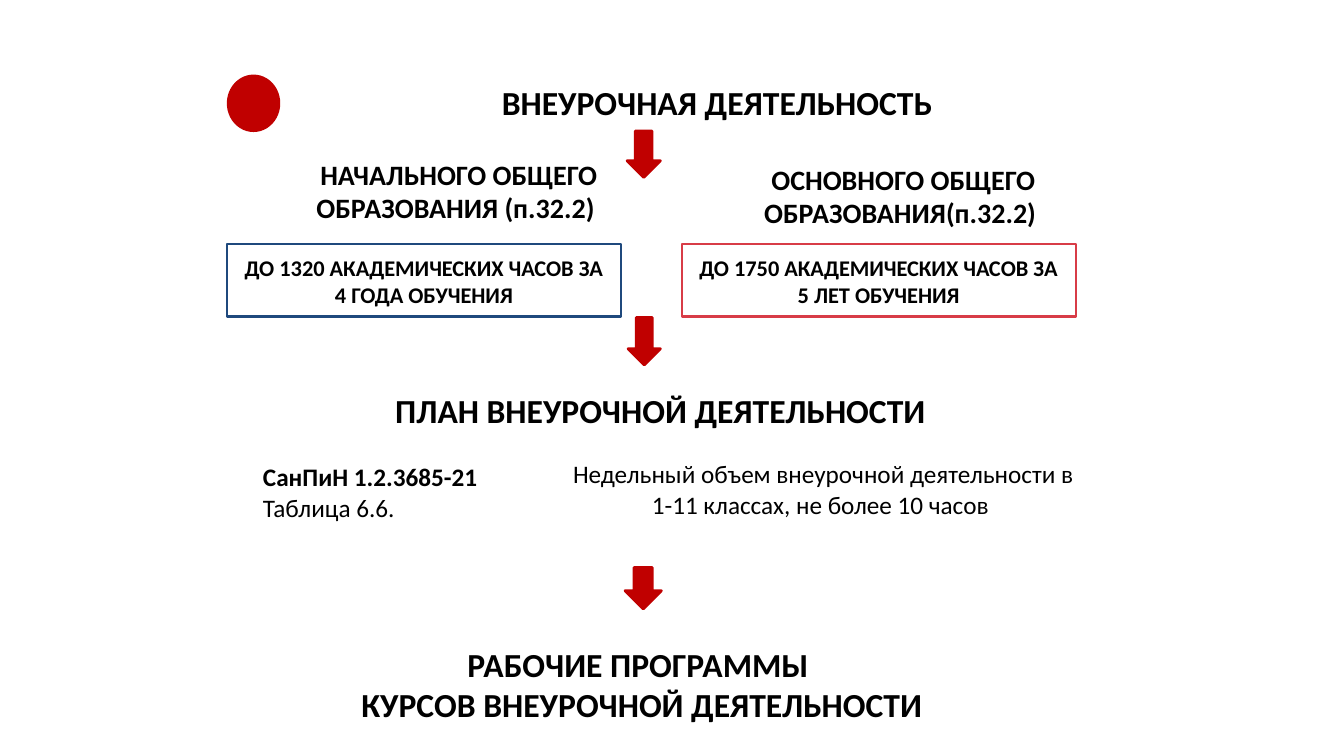
from dataclasses import dataclass

from pptx import Presentation
from pptx.dml.color import RGBColor
from pptx.enum import shapes, text
from pptx.util import Inches, Pt


@dataclass(frozen=True)
class Theme:
    """Colours, font and type sizes of the slide."""
    font: str = "Calibri"
    ink: str = "000000"
    red: str = "C00000"
    navy: str = "1F497D"
    rose: str = "D83C47"
    title: int = 24
    heading: int = 20
    body: int = 18
    box: int = 16


T = Theme()
SHAPE = shapes.MSO_SHAPE


def rgb(code):
    """Turn a hex code into a colour."""
    return RGBColor.from_string(code)


def add_shape(s, kind, box, fill=None, line=None, width=1.5):
    """Add a shadowless preset shape in a box given in inches."""
    sp = s.shapes.add_shape(kind, *map(Inches, box))
    sp.shadow.inherit = False
    if fill:
        sp.fill.solid()
        sp.fill.fore_color.rgb = rgb(fill)
    else:
        sp.fill.background()
    if line:
        sp.line.color.rgb = rgb(line)
        sp.line.width = Pt(width)
    else:
        sp.line.fill.background()
    return sp


def write(tf, lines, size, bold=(True,), align=text.PP_ALIGN.CENTER,
          anchor=text.MSO_ANCHOR.TOP, inset=0.1):
    """Fill a text frame with one paragraph per line."""
    tf.word_wrap = True
    tf.vertical_anchor = anchor
    tf.margin_left = tf.margin_right = Inches(0.1)
    tf.margin_top = tf.margin_bottom = Inches(inset)
    for i, line in enumerate(lines):
        p = tf.paragraphs[0] if i == 0 else tf.add_paragraph()
        p.alignment = align
        r = p.add_run()
        r.text = line
        r.font.name = T.font
        r.font.size = Pt(size)
        r.font.bold = bold[i % len(bold)]
        r.font.color.rgb = rgb(T.ink)


def add_text(s, box, lines, size, **style):
    """Add a text box in a box given in inches."""
    write(s.shapes.add_textbox(*map(Inches, box)).text_frame, lines, size, **style)


def header(s, x, y):
    """Place a plain red disc and the slide title."""
    add_shape(s, SHAPE.OVAL, (x, y + 0.03, 0.53, 0.57), fill=T.red)
    add_text(s, (x + 1.42, y, 6.96, 0.62), ["ВНЕУРОЧНАЯ ДЕЯТЕЛЬНОСТЬ "], T.title)


def level(s, x, y, heading, heading_dx, heading_dy, hours, colour):
    """Place one school level: a heading above its framed hours."""
    sp = add_shape(s, SHAPE.RECTANGLE, (x, y, 3.91, 0.72), line=colour)
    write(sp.text_frame, [hours], T.box)
    add_text(s, (x + heading_dx, y + heading_dy, 4.82, 0.83), heading, T.heading)


def plan(s, x, y):
    """Place the plan title with its norm and weekly limit."""
    add_text(s, (x + 0.56, y, 6.96, 0.62), ["ПЛАН ВНЕУРОЧНОЙ ДЕЯТЕЛЬНОСТИ"], T.title)
    add_text(s, (x, y + 0.76, 2.41, 0.71), ["СанПиН 1.2.3685-21", "Таблица 6.6."],
             T.body, bold=(True, False), align=text.PP_ALIGN.LEFT, inset=0.05)
    add_text(s, (x + 3.06, y + 0.73, 5.19, 0.71),
             ["Недельный объем внеурочной деятельности в 1-11 классах, "
              "не более 10 часов "], T.body, bold=(False,), inset=0.05)


def programmes(s, x, y):
    """Place the closing title."""
    add_text(s, (x, y, 8.23, 0.97),
             ["РАБОЧИЕ ПРОГРАММЫ ", "КУРСОВ ВНЕУРОЧНОЙ ДЕЯТЕЛЬНОСТИ"],
             T.title, anchor=text.MSO_ANCHOR.MIDDLE)


def main():
    """Build the slide and save it."""
    prs = Presentation()
    prs.slide_width, prs.slide_height = Inches(13.33), Inches(7.5)
    s = prs.slides.add_slide(prs.slide_layouts[6])
    left, right = 2.25, 6.76
    header(s, left, 0.71)
    level(s, left, 2.42, ["НАЧАЛЬНОГО ОБЩЕГО", "ОБРАЗОВАНИЯ (п.32.2) "], -0.11, -0.96,
          "ДО 1320 АКАДЕМИЧЕСКИХ ЧАСОВ ЗА 4 ГОДА ОБУЧЕНИЯ", T.navy)
    level(s, right, 2.42, ["ОСНОВНОГО ОБЩЕГО", "ОБРАЗОВАНИЯ(п.32.2) "], -0.21, -0.91,
          "ДО 1750 АКАДЕМИЧЕСКИХ ЧАСОВ ЗА 5 ЛЕТ ОБУЧЕНИЯ", T.rose)
    plan(s, 2.51, 3.77)
    programmes(s, left, 6.3)
    for box in ((6.22, 1.3, 0.33, 0.46), (6.23, 3.15, 0.32, 0.47),
                (6.2, 5.63, 0.36, 0.41)):
        add_shape(s, SHAPE.DOWN_ARROW, box, fill=T.red, line=T.red, width=2)
    prs.save("out.pptx")


if __name__ == "__main__":
    main()
